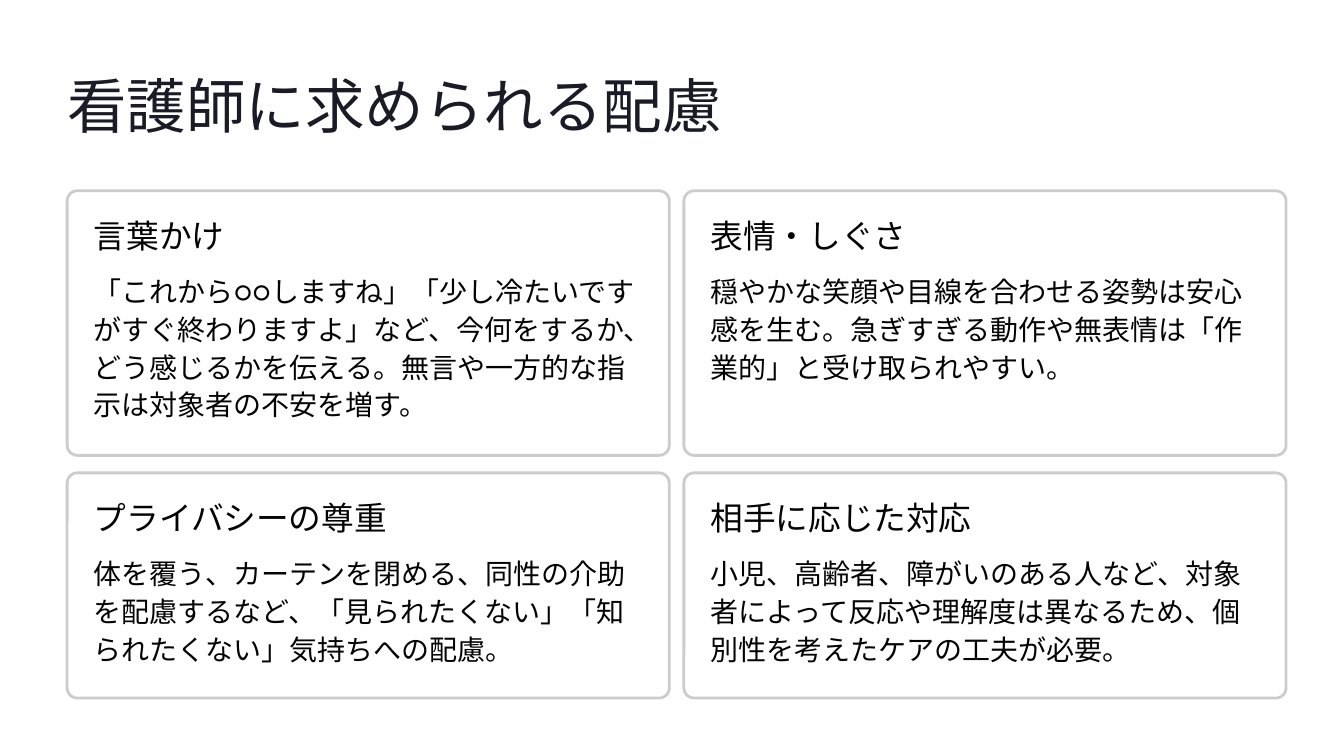
from lxml import etree
from pptx import Presentation
from pptx.dml.color import RGBColor
from pptx.enum.lang import MSO_LANGUAGE_ID
from pptx.enum.shapes import MSO_SHAPE
from pptx.oxml.ns import qn
from pptx.util import Cm, Pt

ROUND = MSO_SHAPE.ROUNDED_RECTANGLE
JAPAN = MSO_LANGUAGE_ID.JAPANESE

COLORS = {"title": "1B1B27", "text": "030303", "card": "FFFFFF", "edge": "CCCCCC"}

# Text styles: font values, line pitch and colour
STYLES = {
    "title": ({"name": "Inter", "size": Pt(51), "language_id": JAPAN}, Pt(64), "title"),
    "head": ({"name": "Inter", "size": Pt(28), "language_id": JAPAN}, Pt(32), "text"),
    "body": ({"name": "Lato", "size": Pt(24), "language_id": JAPAN}, Pt(32.5), "text"),
}
FRAME = {"margin_left": 0, "margin_top": 0, "margin_right": 0, "margin_bottom": 0}

# Card grid, in cm
LEFT, TOP = 2.03, 5.77
WIDTH, GAP_X, GAP_Y = 18.21, 0.44, 0.53
PAD, RADIUS, PITCH = 0.81, 0.31, 1.19

# Rows of cards: height, then heading, text and line count
ROWS = [
    (8.0, [
        ("言葉かけ", "「これから○○しますね」「少し冷たいですがすぐ終わりますよ」など、"
         "今何をするか、どう感じるかを伝える。無言や一方的な指示は対象者の不安を増す。", 4),
        ("表情・しぐさ", "穏やかな笑顔や目線を合わせる姿勢は安心感を生む。"
         "急ぎすぎる動作や無表情は「作業的」と受け取られやすい。", 3),
    ]),
    (6.81, [
        ("プライバシーの尊重", "体を覆う、カーテンを閉める、同性の介助を配慮するなど、"
         "「見られたくない」「知られたくない」気持ちへの配慮。", 3),
        ("相手に応じた対応", "小児、高齢者、障がいのある人など、対象者によって反応や理解度は"
         "異なるため、個別性を考えたケアの工夫が必要。", 3),
    ]),
]


def assign(target, values):
    for name, value in values.items():
        setattr(target, name, value)


def color(key):
    return RGBColor.from_string(COLORS[key])


def add_text(slide, text, style, x, y, w, h, wrap=False):
    font, pitch, tone = STYLES[style]
    frame = slide.shapes.add_textbox(Cm(x), Cm(y), Cm(w), Cm(h)).text_frame
    assign(frame, {**FRAME, "word_wrap": wrap})
    para = frame.paragraphs[0]
    para.line_spacing = pitch
    run = para.add_run()
    run.text = text
    assign(run.font, font)
    run.font.color.rgb = color(tone)
    # East Asian glyphs use the same typeface
    asian = etree.SubElement(run.font._element, qn("a:ea"))
    asian.set("typeface", font["name"])


def add_panel(slide, x, y, w, h):
    panel = slide.shapes.add_shape(ROUND, Cm(x), Cm(y), Cm(w), Cm(h))
    panel.adjustments[0] = RADIUS / h
    panel.shadow.inherit = False
    panel.fill.solid()
    panel.fill.fore_color.rgb = color("card")
    # Slightly transparent fill
    tone = panel.fill._xPr.find(qn("a:solidFill"))[0]
    etree.SubElement(tone, qn("a:alpha")).set("val", "95000")
    panel.line.color.rgb = color("edge")
    panel.line.width = Pt(2.4)


def add_card(slide, x, y, h, head, body, lines):
    add_panel(slide, x, y, WIDTH, h)
    add_text(slide, head, "head", x + PAD, y + PAD, 9.2, 1.17)
    add_text(slide, body, "body", x + PAD, y + 2.39, WIDTH - 2 * PAD, lines * PITCH, True)


def main():
    deck = Presentation()
    deck.slide_width, deck.slide_height = Cm(40.64), Cm(22.86)
    slide = deck.slides.add_slide(deck.slide_layouts[6])

    # Title
    add_text(slide, "看護師に求められる配慮", "title", LEFT, 1.98, 19.89, 2.26)

    # Cards
    y = TOP
    for height, cards in ROWS:
        for col, card in enumerate(cards):
            add_card(slide, LEFT + col * (WIDTH + GAP_X), y, height, *card)
        y += height + GAP_Y

    deck.save("out.pptx")


if __name__ == "__main__":
    main()
